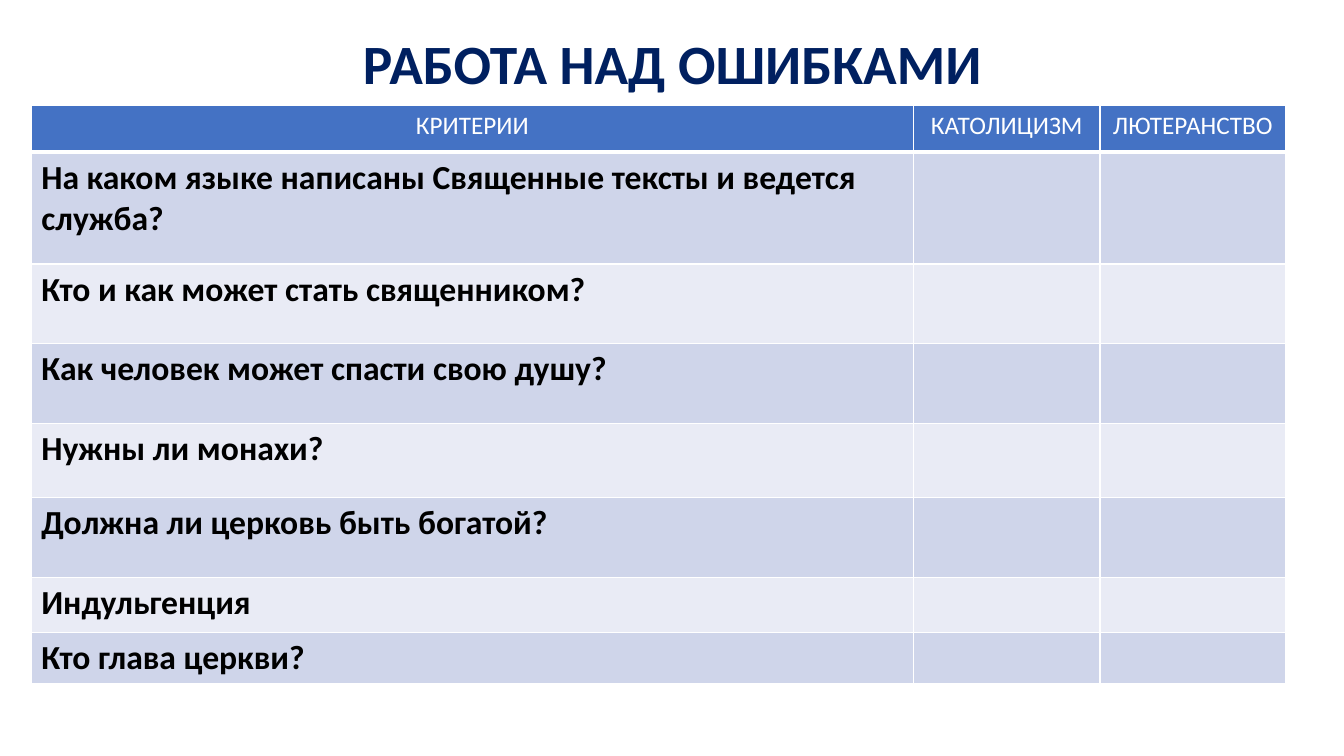
from lxml import etree
from pptx import Presentation
from pptx import util as u
from pptx.dml.color import RGBColor
from pptx.enum import text
from pptx.oxml.ns import qn

COLORS = {
    "title": "002060",
    "header": "4472C4",
    "odd": "CFD5EA",
    "even": "E9EBF5",
    "white": "FFFFFF",
    "black": "000000",
}
HEADINGS = ["КРИТЕРИИ", "КАТОЛИЦИЗМ", "ЛЮТЕРАНСТВО"]
QUESTIONS = [
    "На каком языке написаны Священные тексты и ведется служба?",
    "Кто и как может стать священником?",
    "Как человек может спасти свою душу?",
    "Нужны ли монахи?",
    "Должна ли церковь быть богатой?",
    "Индульгенция",
    "Кто глава церкви?",
]
COLUMN_WIDTHS = [8.75, 1.85, 1.84]
ROW_HEIGHTS = [0.46, 1.11, 0.79, 0.79, 0.74, 0.79, 0.55, 0.46]


def write(frame, words, size, color, bold=False, align=None, spacing=None):
    para = frame.paragraphs[0]
    para.alignment = align
    para.line_spacing = spacing
    span = para.add_run()
    span.text = words
    span.font.name = "Calibri"
    span.font.size = u.Pt(size)
    span.font.bold = bold
    span.font.color.rgb = RGBColor.from_string(COLORS[color])


class SlideBuilder:
    """Hold the style and the current page and add elements to it."""

    def __init__(self, page):
        self.page = page
        self.center = text.PP_ALIGN.CENTER

    def title(self, words, left, top, width, height):
        box = self.page.shapes.add_textbox(*map(u.Inches, (left, top, width, height)))
        frame = box.text_frame
        frame.word_wrap = True
        frame.vertical_anchor = text.MSO_ANCHOR.MIDDLE
        write(frame, words, 39.6, "title", bold=True, align=self.center, spacing=0.9)

    def border(self, cell, bottom=1):
        properties = cell._tc.get_or_add_tcPr()
        for side, points in (("lnL", 1), ("lnR", 1), ("lnT", 1), ("lnB", bottom)):
            line = etree.SubElement(properties, qn(f"a:{side}"), w=str(u.Pt(points)))
            fill = etree.SubElement(line, qn("a:solidFill"))
            etree.SubElement(fill, qn("a:srgbClr"), val=COLORS["white"])

    def paint(self, cell, color):
        cell.fill.solid()
        cell.fill.fore_color.rgb = RGBColor.from_string(COLORS[color])

    def table(self, left, top):
        size = sum(COLUMN_WIDTHS), sum(ROW_HEIGHTS)
        table = self.page.shapes.add_table(
            len(ROW_HEIGHTS), len(COLUMN_WIDTHS), *map(u.Inches, (left, top, *size))
        ).table
        for column, width in zip(table.columns, COLUMN_WIDTHS):
            column.width = u.Inches(width)
        for index, (row, height) in enumerate(zip(table.rows, ROW_HEIGHTS)):
            row.height = u.Inches(height)
            color = "header" if index == 0 else "odd" if index % 2 else "even"
            for cell in row.cells:
                self.border(cell, bottom=1 if index else 3)
                self.paint(cell, color)
        for cell, heading in zip(table.rows[0].cells, HEADINGS):
            write(cell.text_frame, heading, 18, "white", align=self.center)
        for index, question in enumerate(QUESTIONS, 1):
            write(table.cell(index, 0).text_frame, question, 24, "black", bold=True)


def main():
    deck = Presentation()
    deck.slide_width = u.Inches(13.33)
    deck.slide_height = u.Inches(7.5)
    builder = SlideBuilder(deck.slides.add_slide(deck.slide_layouts[6]))
    builder.title("РАБОТА НАД ОШИБКАМИ", 0.92, 0.4, 11.5, 0.52)
    builder.table(0.31, 1.05)
    deck.save("out.pptx")


if __name__ == "__main__":
    main()
